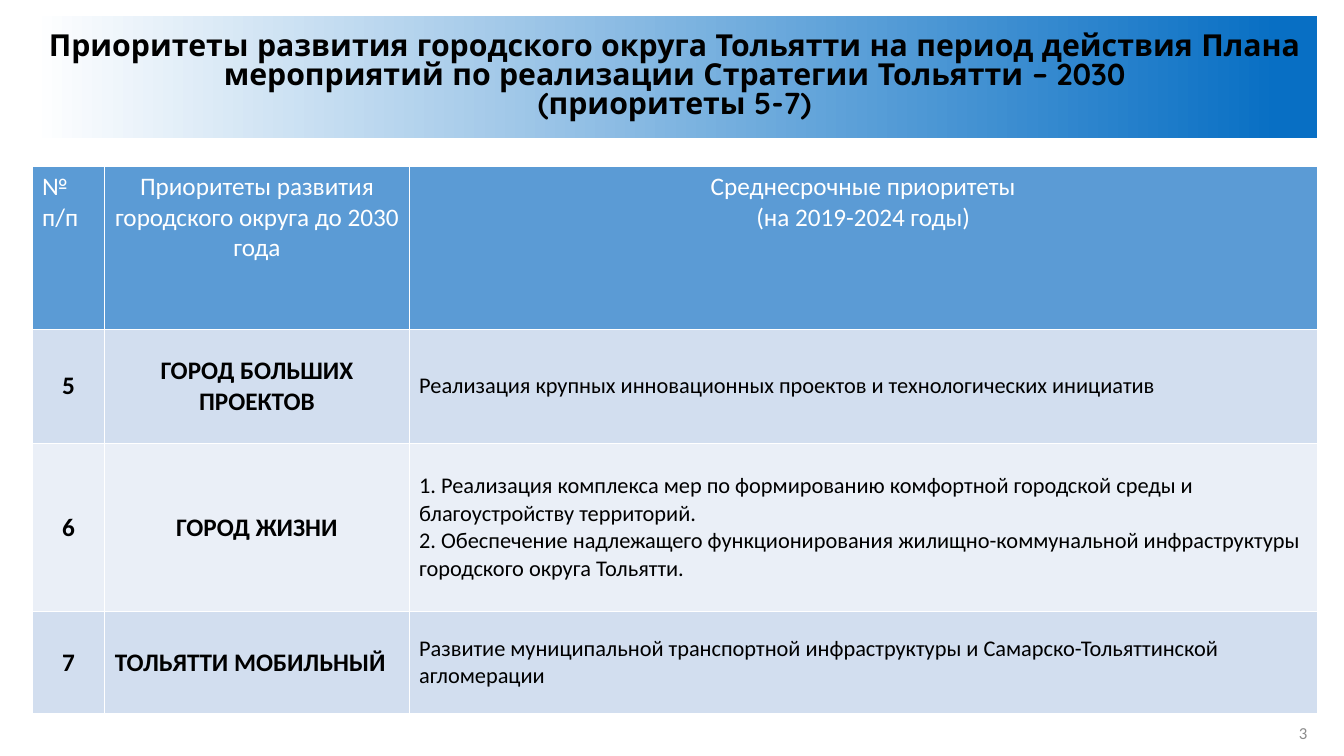
from lxml import etree
from pptx import Presentation
from pptx.dml.color import RGBColor
from pptx.enum import shapes, text
from pptx.oxml import ns
from pptx.util import Cm, Pt

LEFT, WIDTH = 0.81, 32.39
COLUMN_WIDTHS = [1.83, 7.67, 22.89]
ROW_HEIGHTS = [4.11, 2.87, 4.24, 2.57]
HEADER_FILL = "5B9BD5"
BAND_FILLS = ["D2DEEF", "EAEFF7"]
WHITE, BLACK = "FFFFFF", "000000"
LEFT_ALIGN, CENTER, RIGHT = (
    text.PP_ALIGN.LEFT, text.PP_ALIGN.CENTER, text.PP_ALIGN.RIGHT)
TOP, MIDDLE = text.MSO_ANCHOR.TOP, text.MSO_ANCHOR.MIDDLE

TITLE = [
    "Приоритеты развития городского округа Тольятти на период действия Плана "
    "мероприятий по реализации Стратегии Тольятти – 2030",
    "(приоритеты 5-7)",
]
HEADERS = [
    (["№ п/п"], LEFT_ALIGN),
    (["Приоритеты развития городского округа до 2030 года"], CENTER),
    (["Среднесрочные приоритеты", "(на 2019-2024 годы)"], CENTER),
]
# Number, priority, alignment of the priority, medium-term priorities
PRIORITIES = [
    ("5", "ГОРОД БОЛЬШИХ ПРОЕКТОВ", CENTER,
     ["Реализация крупных инновационных проектов и технологических инициатив"]),
    ("6", "ГОРОД ЖИЗНИ", CENTER,
     ["1. Реализация комплекса мер по формированию комфортной городской среды "
      "и благоустройству территорий.",
      "2. Обеспечение надлежащего функционирования жилищно-коммунальной "
      "инфраструктуры городского округа Тольятти."]),
    ("7", "ТОЛЬЯТТИ МОБИЛЬНЫЙ", LEFT_ALIGN,
     ["Развитие муниципальной транспортной инфраструктуры и "
      "Самарско-Тольяттинской агломерации"]),
]


def rgb(value):
    return RGBColor.from_string(value)


def write(frame, lines, size, color=BLACK, bold=False, align=LEFT_ALIGN,
          font="Calibri", spacing=None):
    frame.word_wrap = True
    for index, line in enumerate(lines):
        paragraph = frame.add_paragraph() if index else frame.paragraphs[0]
        paragraph.alignment = align
        paragraph.line_spacing = spacing
        run = paragraph.add_run()
        run.text = line
        run.font.name = font
        run.font.size = Pt(size)
        run.font.bold = bold
        run.font.color.rgb = rgb(color)


def add_borders(cell):
    properties = cell._tc.get_or_add_tcPr()
    for side in ("lnL", "lnR", "lnT", "lnB"):
        line = etree.SubElement(properties, ns.qn(f"a:{side}"), w=str(Pt(1)))
        fill = etree.SubElement(line, ns.qn("a:solidFill"))
        etree.SubElement(fill, ns.qn("a:srgbClr"), val=WHITE)


def fill_cell(cell, lines, fill, size=18, anchor=MIDDLE, **style):
    add_borders(cell)
    cell.fill.solid()
    cell.fill.fore_color.rgb = rgb(fill)
    cell.vertical_anchor = anchor
    write(cell.text_frame, lines, size, **style)


def add_title(slide):
    banner = slide.shapes.add_shape(
        shapes.MSO_SHAPE.RECTANGLE, Cm(LEFT), Cm(0.41), Cm(WIDTH), Cm(3.07))
    banner.shadow.inherit = False
    banner.line.fill.background()
    banner.fill.gradient()
    banner.fill.gradient_angle = 0
    stops = [(0, WHITE), (0.97, "086FC4")]
    for stop, (position, color) in zip(banner.fill.gradient_stops, stops):
        stop.position = position
        stop.color.rgb = rgb(color)
    banner.text_frame.vertical_anchor = MIDDLE
    write(banner.text_frame, TITLE, 21.6, bold=True, align=CENTER,
          font="Quicksand", spacing=0.8)


def add_priorities_table(slide):
    table = slide.shapes.add_table(
        len(ROW_HEIGHTS), len(COLUMN_WIDTHS), Cm(LEFT), Cm(4.19),
        Cm(WIDTH), Cm(sum(ROW_HEIGHTS))).table
    for column, width in zip(table.columns, COLUMN_WIDTHS):
        column.width = Cm(width)
    for row, height in zip(table.rows, ROW_HEIGHTS):
        row.height = Cm(height)

    for column, (lines, align) in enumerate(HEADERS):
        fill_cell(table.cell(0, column), lines, HEADER_FILL, anchor=TOP,
                  color=WHITE, align=align)
    for row, (number, priority, align, goals) in enumerate(PRIORITIES, 1):
        fill = BAND_FILLS[(row - 1) % 2]
        fill_cell(table.cell(row, 0), [number], fill, bold=True, align=CENTER)
        fill_cell(table.cell(row, 1), [priority], fill, bold=True, align=align)
        fill_cell(table.cell(row, 2), goals, fill, size=16)


def add_page_number(slide):
    box = slide.shapes.add_textbox(Cm(32.11), Cm(17.96), Cm(1.09), Cm(1.02))
    box.text_frame.vertical_anchor = MIDDLE
    write(box.text_frame, ["3"], 12, color="8C8C8C", align=RIGHT)


def main():
    presentation = Presentation()
    presentation.slide_width = Cm(33.87)
    presentation.slide_height = Cm(19.05)
    slide = presentation.slides.add_slide(presentation.slide_layouts[6])
    add_priorities_table(slide)
    add_title(slide)
    add_page_number(slide)
    presentation.save("out.pptx")


if __name__ == "__main__":
    main()
